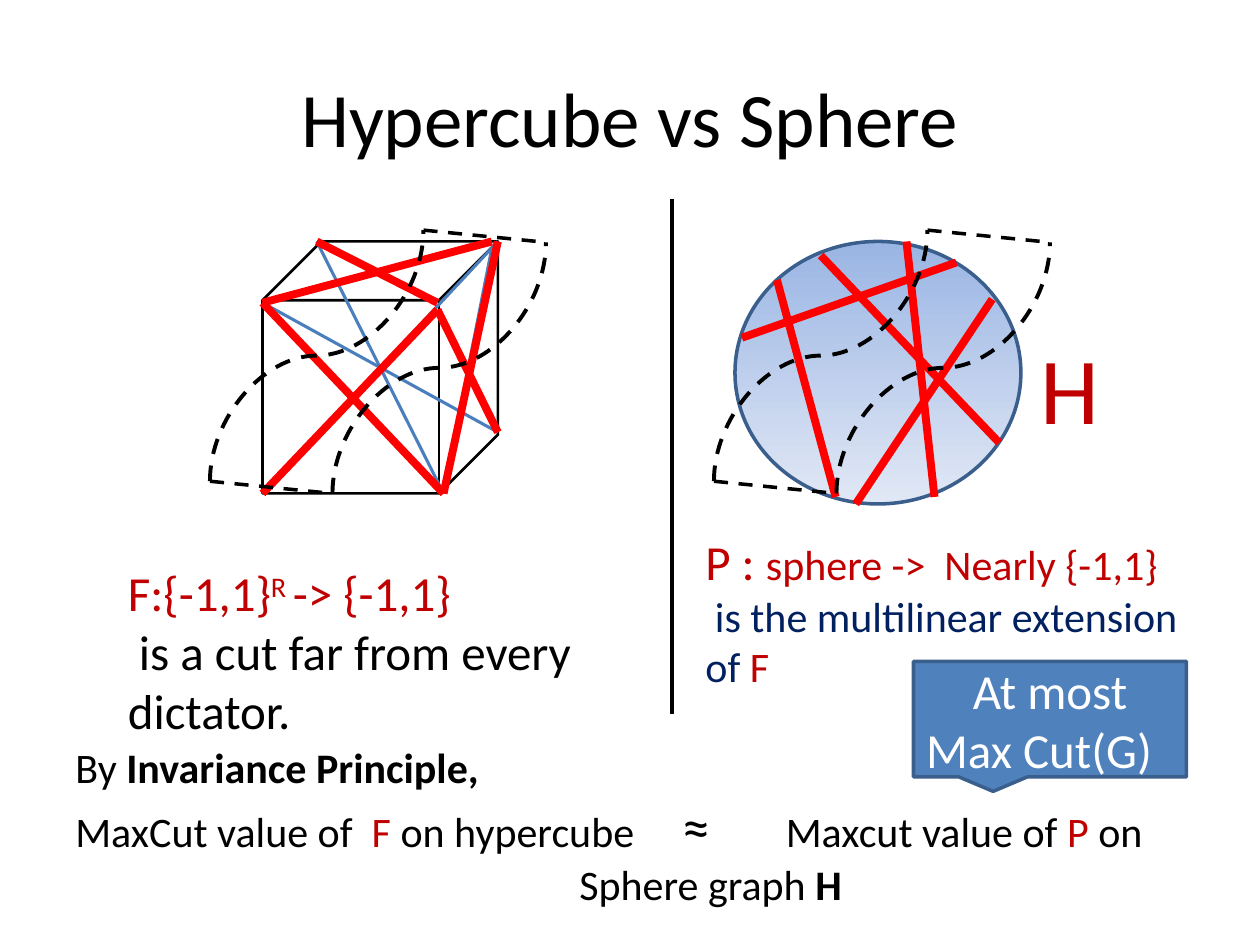
from pptx import Presentation
from pptx.dml.color import RGBColor
from pptx.enum import dml, shapes, text
from pptx.oxml import parse_xml
from pptx.oxml.ns import nsdecls, qn
from pptx.util import Pt

BLACK = RGBColor(0, 0, 0)
WHITE = RGBColor(0xFF, 0xFF, 0xFF)
RED = RGBColor(0xFF, 0, 0)
DARK_RED = RGBColor(0xC0, 0, 0)
NAVY = RGBColor(0, 0x20, 0x60)
BLUE = RGBColor(0x4F, 0x81, 0xBD)
EDGE_BLUE = RGBColor(0x4B, 0x7E, 0xBC)
OUTLINE = RGBColor(0x3A, 0x5F, 0x8C)
SPHERE_TOP = RGBColor(0x9A, 0xB5, 0xE4)
SPHERE_BOTTOM = RGBColor(0xE1, 0xE8, 0xF5)
STRAIGHT = shapes.MSO_CONNECTOR.STRAIGHT
CURVE = shapes.MSO_CONNECTOR.CURVE


def add_line(parent, start, end, color, width, kind=STRAIGHT, dashed=False):
    line = parent.add_connector(kind, *map(Pt, start + end))
    line.line.color.rgb = color
    line.line.width = Pt(width)
    if dashed:
        line.line.dash_style = dml.MSO_LINE.DASH
    line._element.spPr.append(parse_xml(f"<a:effectLst {nsdecls('a')}/>"))
    return line


def write(frame, paragraphs):
    """Fill a text frame from lists of (text, size, colour, bold) runs."""
    frame.word_wrap = True
    for i, runs in enumerate(paragraphs):
        paragraph = frame.paragraphs[0] if i == 0 else frame.add_paragraph()
        for words, size, color, bold in runs:
            if words == "\n":
                paragraph.add_line_break()
                continue
            run = paragraph.add_run()
            run.text = words
            run.font.name = "Calibri"
            run.font.size = Pt(size)
            run.font.color.rgb = color
            run.font.bold = bold


prs = Presentation()
prs.slide_width, prs.slide_height = Pt(720), Pt(540)
slide = prs.slides.add_slide(prs.slide_layouts[5])

title = slide.shapes.title
title.left, title.top, title.width, title.height = Pt(36), Pt(21.6), Pt(648), Pt(90)
title.text_frame.vertical_anchor = text.MSO_ANCHOR.MIDDLE
write(title.text_frame, [[("Hypercube vs Sphere", 44, BLACK, False)]])
title.text_frame.paragraphs[0].alignment = text.PP_ALIGN.CENTER

# Hypercube with its edges; the cut edges are red
hypercube = slide.shapes.add_group_shape().shapes
cube = hypercube.add_shape(shapes.MSO_SHAPE.CUBE, Pt(150), Pt(138), Pt(134.5), Pt(144))
cube.shadow.inherit = False
cube.fill.background()
cube.line.color.rgb = BLACK
cube.line.width = Pt(1.5)

front_top_left, front_top_right = (150, 173), (250, 173)
front_bottom_left, front_bottom_right = (150, 282), (253.5, 282)
back_top_left, back_top_right = (181, 138), (284.5, 138)
back_bottom_right = (284.5, 247)
cut_corner, near_back_top_right = (250, 177), (281, 138)
for start, end in [
    (front_top_left, back_bottom_right),
    (back_top_left, front_top_right),
    (back_top_left, front_bottom_right),
    (back_top_right, front_bottom_left),
    ((281, 142), front_bottom_right),
]:
    add_line(hypercube, start, end, EDGE_BLUE, 1.75)
for start, end in [
    (front_bottom_right, back_top_right),
    (front_bottom_left, cut_corner),
    (front_top_left, near_back_top_right),
    (front_top_left, front_bottom_right),
    (back_top_left, front_top_right),
    (cut_corner, back_bottom_right),
]:
    add_line(hypercube, start, end, RED, 4.5)

# Sphere graph H
sphere_graph = slide.shapes.add_group_shape().shapes
graph_label = sphere_graph.add_textbox(Pt(587.5), Pt(185), Pt(37), Pt(72.7))
write(graph_label.text_frame, [[("H", 54, DARK_RED, False)]])
graph_label.text_frame.word_wrap = False
sphere = sphere_graph.add_shape(shapes.MSO_SHAPE.OVAL, Pt(420), Pt(138), Pt(163.4), Pt(150))
sphere.shadow.inherit = False
sphere.fill.gradient()
sphere.fill.gradient_angle = 270
for stop, color in zip(sphere.fill.gradient_stops, (SPHERE_TOP, SPHERE_BOTTOM)):
    stop.color.rgb = color
sphere.line.color.rgb = OUTLINE
sphere.line.width = Pt(2)
for start, end in [
    ((489, 288), (567, 171)),
    ((534, 284), (518, 138)),
    ((571, 253), (469, 146)),
    ((546.5, 150), (424, 193)),
    ((444, 160), (477.5, 284)),
]:
    add_line(sphere_graph, start, end, RED, 4.5)

add_line(slide.shapes, (384, 114), (384, 408), BLACK, 2.25)

cut_box = slide.shapes.add_textbox(Pt(66), Pt(318), Pt(306), Pt(108.7))
write(cut_box.text_frame, [
    [("F:{-1,1}", 28, DARK_RED, False), ("R ", 28, DARK_RED, False),
     ("-> {-1,1}", 28, DARK_RED, False)],
    [(" is a cut far from every dictator.", 28, BLACK, False)],
])
exponent = cut_box.text_frame.paragraphs[0].runs[1]
exponent.font._element.set("baseline", "30000")

extension_box = slide.shapes.add_textbox(Pt(396), Pt(300), Pt(306), Pt(99.4))
write(extension_box.text_frame, [
    [("P : ", 28, DARK_RED, False), ("sphere ->  Nearly {-1,1}", 24, DARK_RED, False)],
    [(" is the multilinear extension of ", 24, NAVY, False), ("F", 24, DARK_RED, False)],
])

invariance_box = slide.shapes.add_textbox(Pt(36), Pt(420), Pt(642), Pt(104.4))
write(invariance_box.text_frame, [
    [("By ", 24, BLACK, False), ("Invariance Principle,", 24, BLACK, True)],
    [("MaxCut value of  ", 24, BLACK, False), ("F", 24, DARK_RED, False),
     (" on hypercube\t", 24, BLACK, False), ("≈", 32, BLACK, False),
     ("\tMaxcut value of ", 24, BLACK, False), ("P", 24, DARK_RED, False),
     (" on", 24, BLACK, False), ("\n", 24, BLACK, False),
     ("\tSphere graph ", 24, BLACK, False), ("H", 24, BLACK, True)],
])
tab_stops = "".join(f'<a:tab pos="{Pt(stop)}" algn="l"/>' for stop in (288, 347, 406))
comparison = invariance_box.text_frame.paragraphs[1]._p.get_or_add_pPr()
comparison.append(parse_xml(f"<a:tabLst {nsdecls('a')}>{tab_stops}</a:tabLst>"))

# The same dashed band crosses the hypercube and the sphere
band_width, band_height = 122, 143.5
for left in (120, 408):
    band = slide.shapes.add_group_shape().shapes
    for x, y in ((left, 131.5), (left + 70, 138.5)):
        # A quarter turn about the centre swaps width and height
        mid_x, mid_y = x + band_width / 2, y + band_height / 2
        half_w, half_h = band_height / 2, band_width / 2
        curve = add_line(band, (mid_x + half_w, mid_y + half_h),
                         (mid_x - half_w, mid_y - half_h), BLACK, 2.25, CURVE, True)
        curve._element.spPr.find(qn("a:xfrm")).set("rot", "5400000")
    for x, y in ((left + band_width, 131.5), (left, 275)):
        add_line(band, (x, y), (x + 70, y + 7), BLACK, 2, dashed=True)

bound = slide.shapes.add_shape(
    shapes.MSO_SHAPE.RECTANGULAR_CALLOUT, Pt(522), Pt(378), Pt(156), Pt(66))
bound.shadow.inherit = False
bound.fill.solid()
bound.fill.fore_color.rgb = BLUE
bound.line.color.rgb = OUTLINE
bound.line.width = Pt(2)
bound.text_frame.vertical_anchor = text.MSO_ANCHOR.MIDDLE
write(bound.text_frame, [[("At most Max Cut(G)  ", 28, WHITE, False)]])
bound.text_frame.paragraphs[0].alignment = text.PP_ALIGN.CENTER

prs.save("out.pptx")
